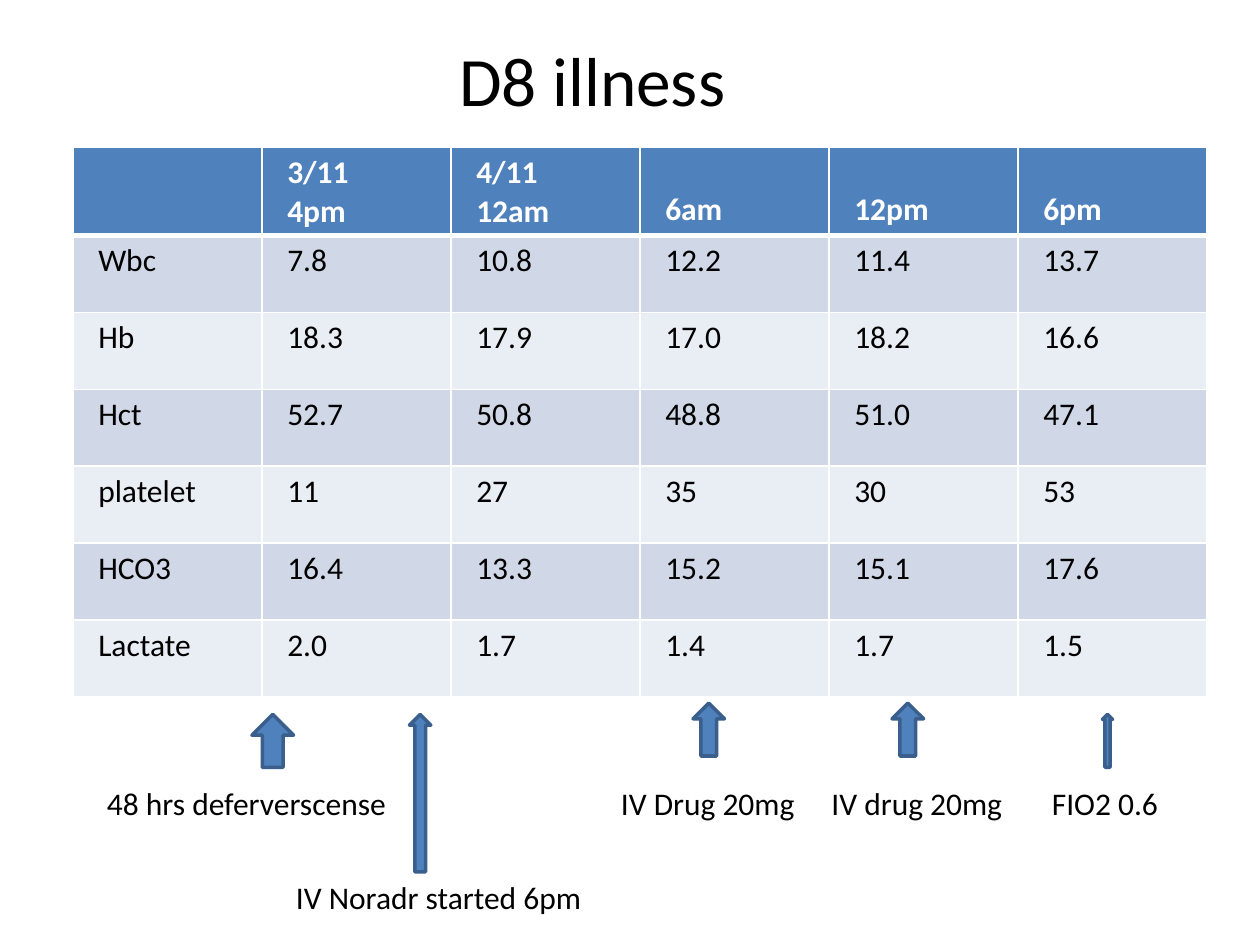
from dataclasses import dataclass

from lxml.etree import SubElement
from pptx import Presentation
from pptx.dml.color import RGBColor
from pptx.enum.shapes import MSO_SHAPE
from pptx.enum.text import MSO_ANCHOR, PP_ALIGN
from pptx.oxml.ns import qn
from pptx.util import Inches, Pt


@dataclass(frozen=True)
class Theme:
    font: str = "Calibri"
    title_size: float = 39.6
    body_size: float = 18
    ink: str = "000000"
    white: str = "FFFFFF"
    blue: str = "4F81BD"
    outline: str = "3A5F8C"
    bands: tuple = ("D0D8E8", "E9EDF4")


THEME = Theme()
TITLE = "D8 illness"
HEADINGS = ["", "3/11\n4pm", "4/11\n12am", "6am", "12pm", "6pm"]
RESULTS = [
    ["Wbc", "7.8", "10.8", "12.2", "11.4", "13.7"],
    ["Hb", "18.3", "17.9", "17.0", "18.2", "16.6"],
    ["Hct", "52.7", "50.8", "48.8", "51.0", "47.1"],
    ["platelet", "11", "27", "35", "30", "53"],
    ["HCO3", "16.4", "13.3", "15.2", "15.1", "17.6"],
    ["Lactate", "2.0", "1.7", "1.4", "1.7", "1.5"],
]
EVENTS = [
    ("48 hrs deferverscense", (0.75, 6.17, 2.75, 0.4), (2, 5.67, 0.33, 0.42)),
    ("IV Drug 20mg", (4.83, 6.17, 2, 0.4), (5.5, 5.58, 0.25, 0.42)),
    ("IV Noradr started 6pm", (2.25, 6.92, 3.08, 0.4), (3.25, 5.67, 0.17, 1.25)),
    ("IV drug 20mg", (6.5, 6.17, 1.58, 0.4), (7.08, 5.58, 0.25, 0.42)),
    ("FIO2 0.6", (8.25, 6.17, 1.33, 0.4), (8.75, 5.67, 0.08, 0.42)),
]
TABLE_LEFT, TABLE_TOP = 0.58, 1.17
COLUMN_WIDTH, HEADER_HEIGHT, ROW_HEIGHT = 1.5, 0.69, 0.61


def color(value):
    return RGBColor.from_string(value)


def write(frame, text, size, ink, bold=False, align=PP_ALIGN.LEFT):
    for index, line in enumerate(text.split("\n")):
        para = frame.add_paragraph() if index else frame.paragraphs[0]
        para.alignment = align
        span = para.add_run()
        span.text = line
        span.font.name = THEME.font
        span.font.size = Pt(size)
        span.font.bold = bold
        span.font.color.rgb = color(ink)


def add_text(page, bounds, text, size, align=PP_ALIGN.LEFT):
    box = page.shapes.add_textbox(*map(Inches, bounds))
    box.text_frame.word_wrap = True
    write(box.text_frame, text, size, THEME.ink, align=align)
    return box


def add_title(page):
    frame = add_text(page, (2.75, 0, 3.17, 1.25), TITLE, THEME.title_size,
                     PP_ALIGN.CENTER).text_frame
    frame.margin_left = Inches(0.83)
    frame.vertical_anchor = MSO_ANCHOR.MIDDLE


def add_borders(cell, top, bottom):
    properties = cell._tc.get_or_add_tcPr()
    for side, width in (("L", 1), ("R", 1), ("T", top), ("B", bottom)):
        line = SubElement(properties, qn(f"a:ln{side}"), w=str(Pt(width)))
        fill = SubElement(line, qn("a:solidFill"))
        SubElement(fill, qn("a:srgbClr"), val=THEME.white)


def add_results(page):
    rows = [HEADINGS] + RESULTS
    heights = [HEADER_HEIGHT] + [ROW_HEIGHT] * len(RESULTS)
    bounds = (TABLE_LEFT, TABLE_TOP, COLUMN_WIDTH * len(HEADINGS), sum(heights))
    table = page.shapes.add_table(len(rows), len(HEADINGS), *map(Inches, bounds)).table
    for column in table.columns:
        column.width = Inches(COLUMN_WIDTH)
    for row, (values, height) in enumerate(zip(rows, heights)):
        header = row == 0
        table.rows[row].height = Inches(height)
        for column, value in enumerate(values):
            cell = table.cell(row, column)
            cell.margin_left = cell.margin_right = Inches(0.2)
            cell.margin_top = cell.margin_bottom = Inches(0.05)
            cell.vertical_anchor = MSO_ANCHOR.BOTTOM if header else MSO_ANCHOR.TOP
            add_borders(cell, 3 if row == 1 else 1, 3 if header else 1)
            cell.fill.solid()
            cell.fill.fore_color.rgb = color(THEME.blue if header else THEME.bands[(row - 1) % 2])
            if value:
                write(cell.text_frame, value, THEME.body_size,
                      THEME.white if header else THEME.ink, header)


def add_arrow(page, bounds):
    arrow = page.shapes.add_shape(MSO_SHAPE.UP_ARROW, *map(Inches, bounds))
    arrow.shadow.inherit = False
    arrow.fill.solid()
    arrow.fill.fore_color.rgb = color(THEME.blue)
    arrow.line.color.rgb = color(THEME.outline)
    arrow.line.width = Pt(2)


def main():
    deck = Presentation()
    deck.slide_width, deck.slide_height = Inches(10), Inches(7.5)
    page = deck.slides.add_slide(deck.slide_layouts[6])
    add_title(page)
    add_results(page)
    for label, label_bounds, arrow_bounds in EVENTS:
        add_text(page, label_bounds, label, THEME.body_size)
        add_arrow(page, arrow_bounds)
    deck.save("out.pptx")


if __name__ == "__main__":
    main()
